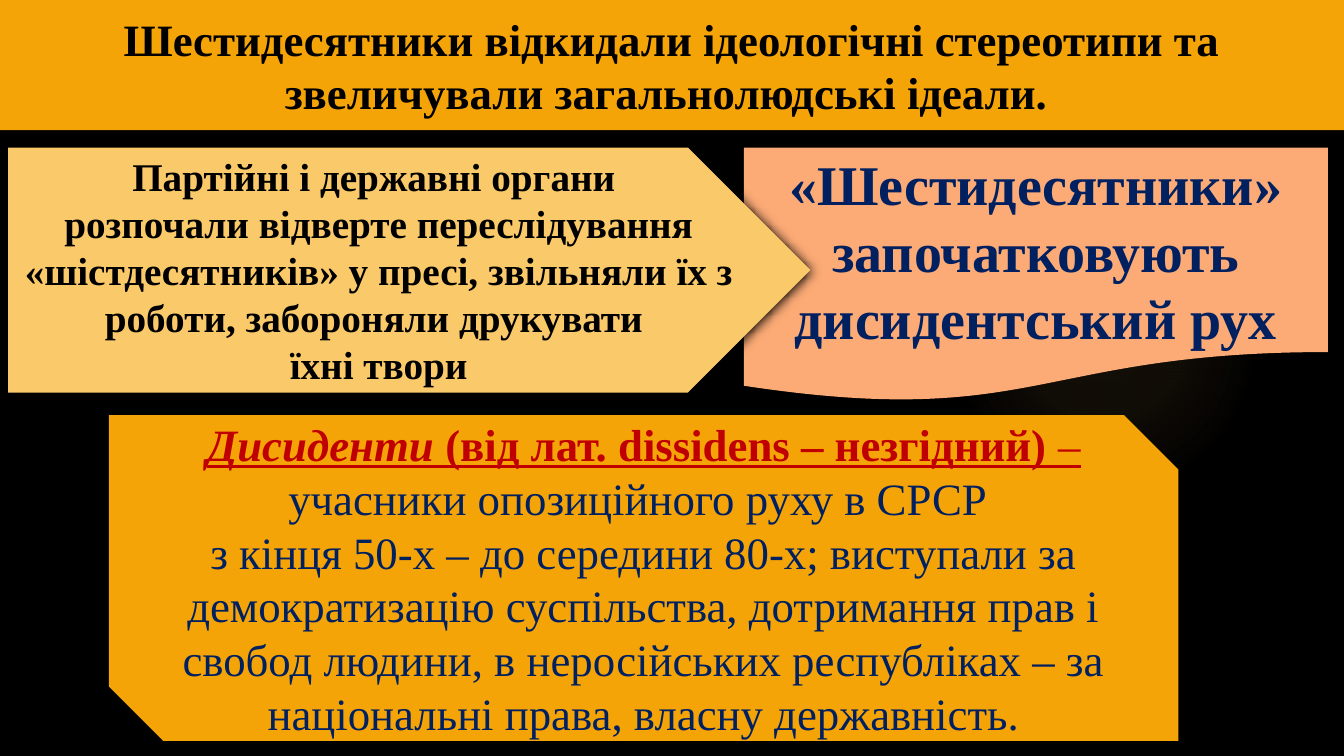
from lxml.etree import SubElement
from pptx import Presentation
from pptx.dml.color import RGBColor
from pptx.enum.shapes import MSO_SHAPE
from pptx.enum.text import MSO_ANCHOR, MSO_AUTO_SIZE, PP_ALIGN
from pptx.oxml import parse_xml
from pptx.oxml.ns import nsdecls, qn
from pptx.util import Pt

BLACK = RGBColor(0x00, 0x00, 0x00)
ORANGE = RGBColor(0xF5, 0xA4, 0x08)
SAND = RGBColor(0xFA, 0xC9, 0x6A)
PEACH = RGBColor(0xFC, 0xAB, 0x76)
NAVY = RGBColor(0x00, 0x20, 0x60)
RED = RGBColor(0xC0, 0x00, 0x00)
FONT = "Times New Roman"

# Text: a list of paragraphs, each a list of (wording, format) runs
HEADING = {"size": Pt(32), "bold": True, "color": BLACK}
PERSECUTION = {"size": Pt(28), "bold": True, "color": BLACK}
MOVEMENT = {"size": Pt(40), "bold": True, "color": NAVY}
MEANING = {"size": Pt(32), "bold": False, "color": NAVY}
TERM = {"size": Pt(32), "bold": True, "underline": True, "color": RED}

HEADING_TEXT = [[("Шестидесятники відкидали ідеологічні стереотипи та "
                  "звеличували загальнолюдські ідеали. ", HEADING)]]
MOVEMENT_TEXT = [[("«Шестидесятники» започатковують дисидентський рух", MOVEMENT)]]
PERSECUTION_TEXT = [
    [("Партійні і державні органи ", PERSECUTION)],
    [("розпочали відверте переслідування «шістдесятників» у пресі, "
      "звільняли їх з роботи, забороняли друкувати ", PERSECUTION)],
    [("їхні твори", PERSECUTION)],
]
DEFINITION_TEXT = [
    [("Дисиденти ", TERM | {"italic": True}),
     ("(від лат. dissidens – незгідний)", TERM),
     (" – ", TERM | {"bold": False}),
     ("учасники опозиційного руху в СРСР ", MEANING)],
    [("з кінця 50-х – до середини 80-х; виступали за демократизацію "
      "суспільства, дотримання прав і свобод людини, в неросійських "
      "республіках – за національні права, власну державність.", MEANING)],
]


def write(shape, paragraphs):
    frame = shape.text_frame
    frame.word_wrap = True
    frame.auto_size = MSO_AUTO_SIZE.NONE
    frame.vertical_anchor = MSO_ANCHOR.MIDDLE
    for index, runs in enumerate(paragraphs):
        paragraph = frame.add_paragraph() if index else frame.paragraphs[0]
        paragraph.alignment = PP_ALIGN.CENTER
        for wording, formatting in runs:
            run = paragraph.add_run()
            run.text = wording
            run.font.name = FONT
            for name, value in formatting.items():
                if name == "color":
                    run.font.color.rgb = value
                else:
                    setattr(run.font, name, value)


def place_title(slide, color, paragraphs, **box):
    title = slide.shapes.title
    for name, value in box.items():
        setattr(title, name, value)
    title.fill.solid()
    title.fill.fore_color.rgb = color
    write(title, paragraphs)


def add_panel(slide, preset, box, color, paragraphs):
    panel = slide.shapes.add_shape(preset, *map(Pt, box))
    panel.shadow.inherit = False
    panel.fill.solid()
    panel.fill.fore_color.rgb = color
    panel.line.fill.background()
    write(panel, paragraphs)
    return panel


def cast_shadow(panel):
    effects = panel._element.spPr.find(qn("a:effectLst"))
    shadow = SubElement(effects, qn("a:outerShdw"), blurRad=str(Pt(8.5)),
                        dist=str(Pt(1)), dir="5400000", rotWithShape="0")
    SubElement(shadow, qn("a:srgbClr"), val=str(BLACK))


def add_glow(slide, box, color, stops):
    glow = slide.shapes.add_shape(MSO_SHAPE.OVAL, *map(Pt, box))
    glow.shadow.inherit = False
    glow.line.fill.background()
    stop_xml = "".join(
        f'<a:gs pos="{position * 1000}"><a:srgbClr val="{color}">'
        f'<a:alpha val="{opacity * 1000}"/></a:srgbClr></a:gs>'
        for position, opacity in stops)
    gradient = parse_xml(
        f'<a:gradFill {nsdecls("a")}><a:gsLst>{stop_xml}</a:gsLst>'
        '<a:path path="circle"><a:fillToRect l="50000" t="50000" '
        'r="50000" b="50000"/></a:path></a:gradFill>')
    glow._element.spPr.find(qn("a:prstGeom")).addnext(gradient)


def main():
    deck = Presentation()
    deck.slide_width, deck.slide_height = Pt(960), Pt(540)
    slide = deck.slides.add_slide(deck.slide_layouts[5])
    slide.background.fill.solid()
    slide.background.fill.fore_color.rgb = BLACK

    # Faint light in the background
    add_glow(slide, (677.5, 131.8, 221.8, 221.8), SAND, [(0, 7), (36, 6), (69, 0)])

    # Heading band
    place_title(slide, ORANGE, HEADING_TEXT,
                left=Pt(0), top=Pt(0), width=Pt(960), height=Pt(92.9))

    # Outcome, definition, and the arrow that leads to the outcome
    add_panel(slide, MSO_SHAPE.FLOWCHART_DOCUMENT, (531.4, 105.4, 417, 182.2),
              PEACH, MOVEMENT_TEXT)
    add_panel(slide, MSO_SHAPE.SNIP_2_DIAG_RECTANGLE, (77.8, 296.6, 763.9, 232.6),
              ORANGE, DEFINITION_TEXT)
    persecution = add_panel(slide, MSO_SHAPE.PENTAGON, (5.8, 105.4, 573.1, 175),
                            SAND, PERSECUTION_TEXT)
    cast_shadow(persecution)

    deck.save("out.pptx")


if __name__ == "__main__":
    main()
